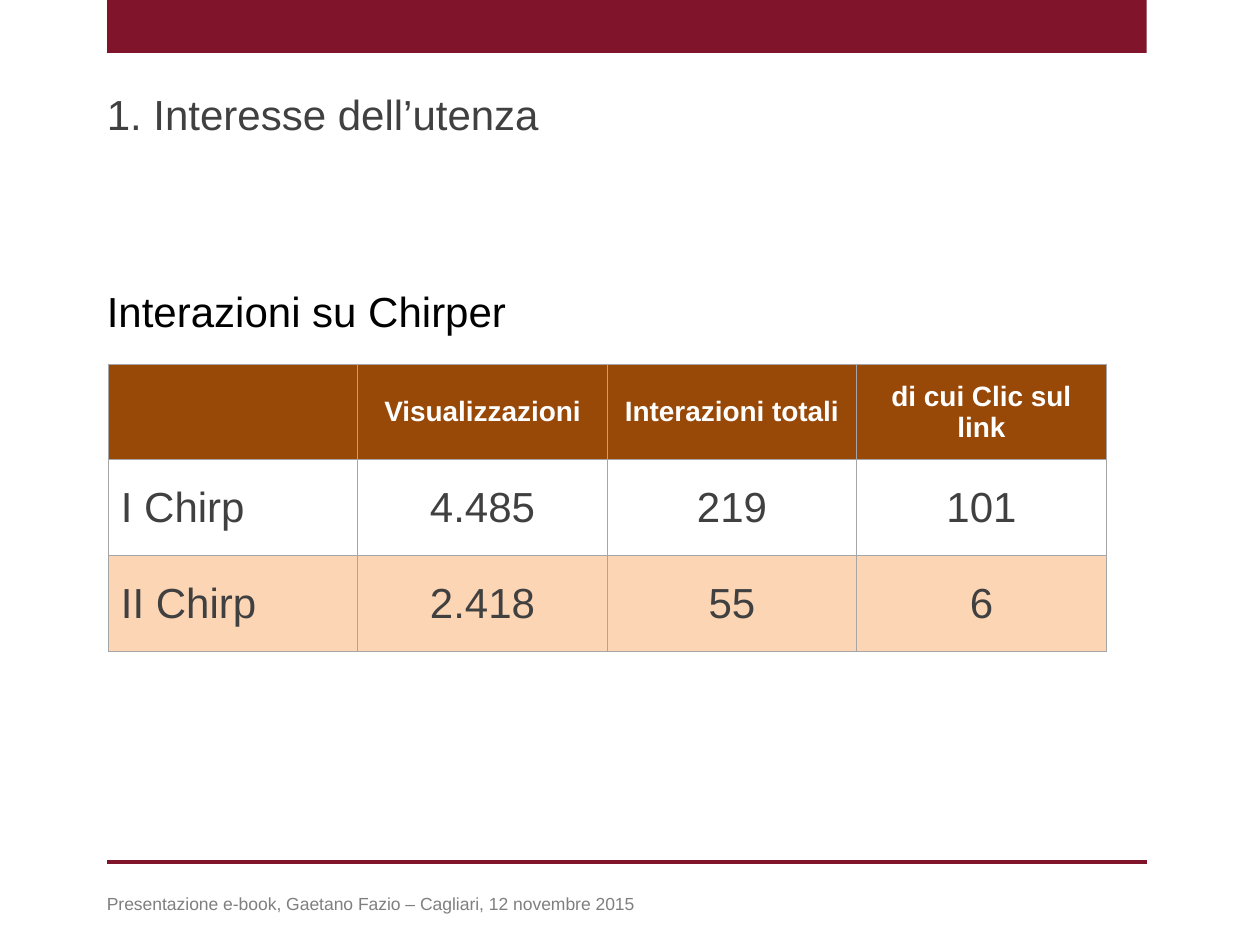
import pptx
import pptx.dml.color
import pptx.enum.shapes
import pptx.enum.text
import pptx.oxml
import pptx.oxml.ns
import pptx.util
from dataclasses import dataclass

Inches = pptx.util.Inches
Align = pptx.enum.text.PP_ALIGN


@dataclass(frozen=True)
class Theme:
    font: str = "Arial"
    accent: str = "7F142A"
    footer: str = "7F7F7F"
    body: str = "404040"
    black: str = "000000"
    white: str = "FFFFFF"
    header: str = "984807"
    band: str = "FCD5B5"
    border: str = "A6A6A6"
    border_width: float = 0.75
    rule_width: float = 2
    body_size: int = 24
    header_size: int = 16
    footer_size: int = 10


THEME = Theme()
TEXTS = [
    ("Presentazione e-book, Gaetano Fazio – Cagliari, 12 novembre 2015",
     7.04, 5.13, 0.27, THEME.footer_size, THEME.footer),
    ("1. Interesse dell’utenza", 0.65, 8.24, 0.5, THEME.body_size, THEME.body),
    ("Interazioni su Chirper", 2.22, 8.24, 0.5, THEME.body_size, THEME.black),
]
ROWS = [
    ("", "Visualizzazioni", "Interazioni totali", "di cui Clic sul link"),
    ("I Chirp", "4.485", "219", "101"),
    ("II Chirp", "2.418", "55", "6"),
]
ROW_FILLS = [THEME.header, None, THEME.band]
LEFT, RIGHT, TEXT_LEFT = 0.85, 9.1, 0.75
TABLE_LEFT, TABLE_TOP, COLUMN_WIDTH, ROW_HEIGHT = 0.86, 2.89, 1.98, 0.76


def rgb(color):
    return pptx.dml.color.RGBColor.from_string(color)


def add_run(paragraph, text, size, color, bold=False):
    run = paragraph.add_run()
    run.text = text
    run.font.name = THEME.font
    run.font.size = pptx.util.Pt(size)
    run.font.bold = bold
    run.font.color.rgb = rgb(color)


def add_frame(slide):
    bar = slide.shapes.add_shape(
        pptx.enum.shapes.MSO_SHAPE.RECTANGLE,
        Inches(LEFT), 0, Inches(RIGHT - LEFT), Inches(0.42))
    bar.shadow.inherit = False
    bar.fill.solid()
    bar.fill.fore_color.rgb = rgb(THEME.accent)
    bar.line.fill.background()
    rule = slide.shapes.add_connector(
        pptx.enum.shapes.MSO_CONNECTOR.STRAIGHT,
        Inches(LEFT), Inches(6.84), Inches(RIGHT), Inches(6.84))
    rule.line.color.rgb = rgb(THEME.accent)
    rule.line.width = pptx.util.Pt(THEME.rule_width)
    properties = rule._element.spPr
    properties.append(pptx.oxml.parse_xml(
        f'<a:effectLst {pptx.oxml.ns.nsdecls("a")}/>'))


def add_text(slide, text, top, width, height, size, color):
    box = slide.shapes.add_textbox(
        Inches(TEXT_LEFT), Inches(top), Inches(width), Inches(height))
    box.text_frame.word_wrap = True
    add_run(box.text_frame.paragraphs[0], text, size, color)


def set_borders(cell):
    properties = cell._tc.get_or_add_tcPr()
    for side in ("L", "R", "T", "B"):
        properties.append(pptx.oxml.parse_xml(
            f'<a:ln{side} {pptx.oxml.ns.nsdecls("a")} '
            f'w="{pptx.util.Pt(THEME.border_width)}"><a:solidFill>'
            f'<a:srgbClr val="{THEME.border}"/></a:solidFill></a:ln{side}>'))


def fill_cell(cell, text, row, column):
    set_borders(cell)
    if ROW_FILLS[row]:
        cell.fill.solid()
        cell.fill.fore_color.rgb = rgb(ROW_FILLS[row])
    else:
        cell.fill.background()
    cell.vertical_anchor = pptx.enum.text.MSO_ANCHOR.MIDDLE
    paragraph = cell.text_frame.paragraphs[0]
    paragraph.alignment = Align.CENTER if column else Align.LEFT
    if text and row == 0:
        add_run(paragraph, text, THEME.header_size, THEME.white, True)
    elif text:
        add_run(paragraph, text, THEME.body_size, THEME.body)


def add_interactions_table(slide):
    table = slide.shapes.add_table(
        len(ROWS), len(ROWS[0]), Inches(TABLE_LEFT), Inches(TABLE_TOP),
        Inches(COLUMN_WIDTH * len(ROWS[0])),
        Inches(ROW_HEIGHT * len(ROWS))).table
    for column in table.columns:
        column.width = Inches(COLUMN_WIDTH)
    for row, texts in enumerate(ROWS):
        table.rows[row].height = Inches(ROW_HEIGHT)
        for column, text in enumerate(texts):
            fill_cell(table.cell(row, column), text, row, column)


def main():
    presentation = pptx.Presentation()
    presentation.slide_width = Inches(10)
    presentation.slide_height = Inches(7.5)
    slide = presentation.slides.add_slide(presentation.slide_layouts[6])
    add_frame(slide)
    for text in TEXTS:
        add_text(slide, *text)
    add_interactions_table(slide)
    presentation.save("out.pptx")


if __name__ == "__main__":
    main()
